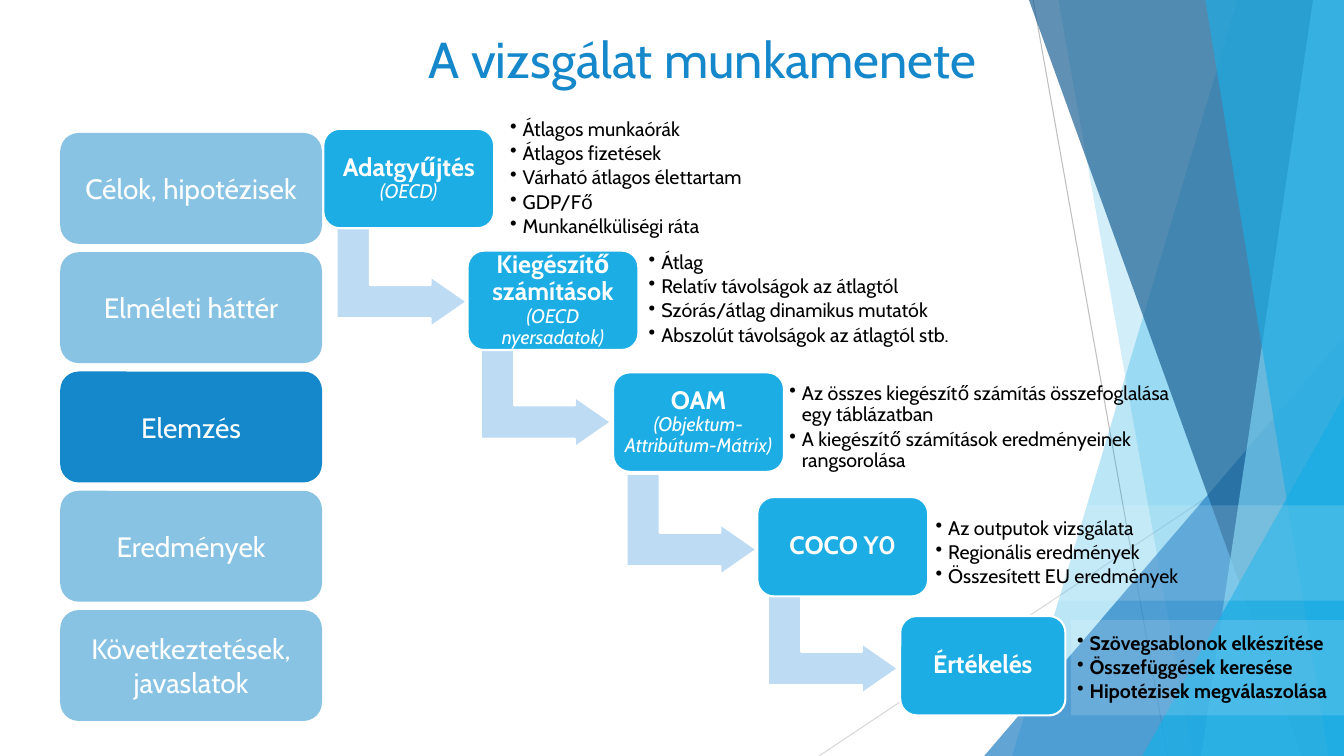
import lxml.etree
import pptx
import pptx.dml.color
import pptx.enum.shapes
import pptx.enum.text
import pptx.oxml.ns
import pptx.util

Pt = pptx.util.Pt
qn = pptx.oxml.ns.qn
SHAPES = pptx.enum.shapes.MSO_SHAPE
ALIGN = pptx.enum.text.PP_ALIGN
ANCHOR = pptx.enum.text.MSO_ANCHOR

FONT = "Cabin"
WIDTH, HEIGHT = 960, 540
BLUE, SKY, PALE, WHITE, BLACK = "1488CA", "1CADE4", "BDDBF2", "FFFFFF", "000000"

CHAPTERS = ["Célok, hipotézisek", "Elméleti háttér", "Elemzés", "Eredmények",
            "Következtetések, javaslatok"]
CURRENT_CHAPTER = "Elemzés"

# heading, note, box, arrow position, list box, list items
STAGES = [
    ("Adatgyűjtés", "(OECD)", (231, 92, 122, 71), (251, 151), (360, 85, 264, 85),
     ["Átlagos munkaórák", "Átlagos fizetések", "Várható átlagos élettartam",
      "GDP/Fő", "Munkanélküliségi ráta"]),
    ("Kiegészítő számítások", "(OECD nyersadatok)", (334, 179, 122, 71), (354, 237),
     (459, 168, 256, 92),
     ["Átlag", "Relatív távolságok az átlagtól", "Szórás/átlag dinamikus mutatók",
      "Abszolút távolságok az átlagtól stb."]),
    ("OAM", "(Objektum-Attribútum-Mátrix)", (438, 266, 122, 71), (458, 328),
     (559.5, 264, 300, 83),
     ["Az összes kiegészítő számítás összefoglalása egy táblázatban",
      "A kiegészítő számítások eredményeinek rangsorolása"]),
    ("COCO Y0", None, (541, 355, 122, 71), (559, 413), (664, 361, 296, 68),
     ["Az outputok vizsgálata", "Regionális eredmények", "Összesített EU eredmények"]),
    ("Értékelés", None, (643, 440, 118, 71), None, (765, 443, 195, 68),
     ["Szövegsablonok elkészítése", "Összefüggések keresése",
      "Hipotézisek megválaszolása"]),
]


def rgb(value):
    return pptx.dml.color.RGBColor.from_string(value)


def paint(shape, color, opacity=100, outline=None):
    shape.fill.solid()
    shape.fill.fore_color.rgb = rgb(color)
    if opacity < 100:
        tint = shape.element.spPr.find(qn("a:solidFill")).find(qn("a:srgbClr"))
        lxml.etree.SubElement(tint, qn("a:alpha")).set("val", str(opacity * 1000))
    if outline:
        shape.line.color.rgb = rgb(outline)
        shape.line.width = Pt(1.5)
    else:
        shape.line.fill.background()
    shape.shadow.inherit = False


def add_preset(slide, preset, box, color, opacity=100, outline=None):
    shape = slide.shapes.add_shape(preset, *map(Pt, box))
    paint(shape, color, opacity, outline)
    return shape


def add_run(paragraph, text, size, color, bold=False, italic=False):
    run = paragraph.add_run()
    run.text = text
    run.font.name = FONT
    run.font.size = Pt(size)
    run.font.bold = bold
    run.font.italic = italic
    run.font.color.rgb = rgb(color)


def set_frame(frame, anchor, inset):
    frame.word_wrap = True
    frame.auto_size = pptx.enum.text.MSO_AUTO_SIZE.NONE
    frame.vertical_anchor = anchor
    frame.margin_left = frame.margin_right = Pt(inset)
    frame.margin_top = frame.margin_bottom = Pt(min(inset, 5))


def add_ray(slide, start, end, color):
    ray = slide.shapes.add_connector(pptx.enum.shapes.MSO_CONNECTOR.STRAIGHT,
                                     *map(Pt, start + end))
    ray.line.color.rgb = rgb(color)
    ray.line.width = Pt(0.75)
    lxml.etree.SubElement(ray.element.spPr, qn("a:effectLst"))


def add_shard(slide, top_x, bottom_x, color, opacity):
    """Fill the area from a slanted edge to the right side of the slide."""
    outline = slide.shapes.build_freeform(top_x, 0, scale=12700)
    outline.add_line_segments([(WIDTH, 0), (WIDTH, HEIGHT), (bottom_x, HEIGHT)])
    paint(outline.convert_to_shape(), color, opacity)


def add_corner(slide, left, top, color, opacity):
    """Fill a right triangle in the bottom right corner of the slide."""
    box = (left, top, WIDTH - left, HEIGHT - top)
    corner = add_preset(slide, SHAPES.ISOSCELES_TRIANGLE, box, color, opacity)
    corner.adjustments[0] = 1


def add_backdrop(slide):
    add_ray(slide, (738, 0), (834, HEIGHT), "BFBFBF")
    add_ray(slide, (WIDTH, 290), (585, HEIGHT), "D9D9D9")
    add_shard(slide, 884, 723, SKY, 30)
    add_shard(slide, 756, 852, SKY, 20)
    add_corner(slide, 703, 240, "2683C6", 72)
    add_shard(slide, 735, 930, "1D6294", 70)
    add_shard(slide, 938, 858, "77CEEF", 70)
    add_shard(slide, 861, 949, SKY, 65)
    add_corner(slide, 816, 283, SKY, 80)


def add_title(slide, box, text):
    title = slide.shapes.title
    title.left, title.top, title.width, title.height = map(Pt, box)
    set_frame(title.text_frame, ANCHOR.TOP, 7.2)
    paragraph = title.text_frame.paragraphs[0]
    paragraph.alignment = ALIGN.LEFT
    add_run(paragraph, text, 36, BLUE)


def add_chapters(slide, box):
    left, top, width, height = box
    gap = 6
    card_height = (height - gap * (len(CHAPTERS) - 1)) / len(CHAPTERS)
    for row, chapter in enumerate(CHAPTERS):
        card = add_preset(slide, SHAPES.ROUNDED_RECTANGLE,
                          (left, top + row * (card_height + gap), width, card_height),
                          BLUE, 100 if chapter == CURRENT_CHAPTER else 50)
        set_frame(card.text_frame, ANCHOR.MIDDLE, 7.2)
        paragraph = card.text_frame.paragraphs[0]
        paragraph.alignment = ALIGN.CENTER
        add_run(paragraph, chapter, 20, WHITE)


def add_arrow(slide, position):
    arrow = add_preset(slide, SHAPES.BENT_UP_ARROW, position + (72, 93), PALE,
                       outline=WHITE)
    arrow.rotation = 90
    for index, share in enumerate((0.33, 0.25, 0.36)):
        arrow.adjustments[index] = share


def add_stage_box(slide, box, heading, note):
    stage = add_preset(slide, SHAPES.ROUNDED_RECTANGLE, box, SKY, outline=WHITE)
    set_frame(stage.text_frame, ANCHOR.MIDDLE, 5)
    paragraph = stage.text_frame.paragraphs[0]
    paragraph.alignment = ALIGN.CENTER
    paragraph.line_spacing = 0.9
    add_run(paragraph, heading, 18, WHITE, bold=True)
    if note:
        paragraph.add_line_break()
        add_run(paragraph, note, 14, WHITE, italic=True)


def add_details(slide, box, items, veiled, bold):
    details = slide.shapes.add_textbox(*map(Pt, box))
    if veiled:
        paint(details, WHITE, 15)
    frame = details.text_frame
    set_frame(frame, ANCHOR.MIDDLE, 4.3)
    for index, item in enumerate(items):
        paragraph = frame.add_paragraph() if index else frame.paragraphs[0]
        paragraph.line_spacing = 0.9
        paragraph.space_after = Pt(2.1)
        properties = paragraph._p.get_or_add_pPr()
        properties.set("marL", str(Pt(9)))
        properties.set("indent", str(Pt(-9)))
        lxml.etree.SubElement(properties, qn("a:buChar")).set("char", "•")
        add_run(paragraph, item, 14, BLACK, bold=bold)


def add_staircase(slide):
    for heading, note, box, arrow, details_box, items in STAGES:
        if arrow:
            add_arrow(slide, arrow)
        add_stage_box(slide, box, heading, note)
        is_last = arrow is None
        add_details(slide, details_box, items, veiled=note is None, bold=is_last)


def main():
    deck = pptx.Presentation()
    deck.slide_width, deck.slide_height = Pt(WIDTH), Pt(HEIGHT)
    slide = deck.slides.add_slide(deck.slide_layouts.get_by_name("Title Only"))
    add_backdrop(slide)
    add_title(slide, (299, 15, 476, 79), "A vizsgálat munkamenete")
    add_chapters(slide, (43, 95, 187, 420))
    add_staircase(slide)
    deck.save("out.pptx")


if __name__ == "__main__":
    main()
